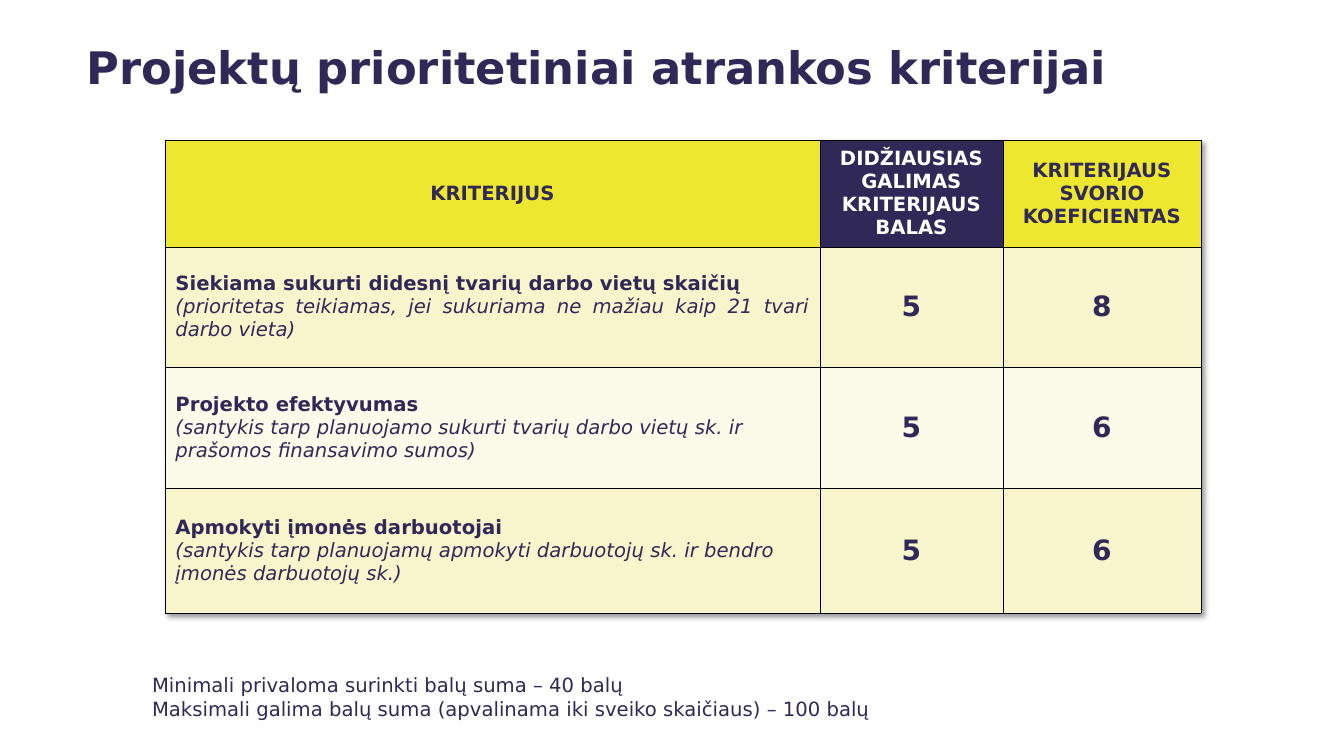
from lxml import etree
from pptx import Presentation, util as u
from pptx.dml.color import RGBColor
from pptx.enum import text
from pptx.oxml import ns

FONT = "DejaVu Sans"
NAVY, YELLOW, WHITE = "302857", "EEE730", "FFFFFF"
CREAM, PALE = "F8F5CD", "FCFAE8"
CENTER, JUSTIFY, LEFT = (text.PP_ALIGN.CENTER, text.PP_ALIGN.JUSTIFY,
                         text.PP_ALIGN.LEFT)

COLUMN_WIDTHS = [6.49, 1.82, 1.96]
ROW_HEIGHTS = [1.06, 1.19, 1.2, 1.24]
HEADERS = [
    ("KRITERIJUS", YELLOW, NAVY),
    ("DIDŽIAUSIAS GALIMAS KRITERIJAUS BALAS", NAVY, WHITE),
    ("KRITERIJAUS SVORIO KOEFICIENTAS", YELLOW, NAVY),
]
CRITERIA = [
    ("Siekiama sukurti didesnį tvarių darbo vietų skaičių",
     "(prioritetas teikiamas, jei sukuriama ne mažiau kaip 21 tvari darbo vieta)",
     JUSTIFY, "5", "8", CREAM),
    ("Projekto efektyvumas",
     "(santykis tarp planuojamo sukurti tvarių darbo vietų sk. ir prašomos "
     "finansavimo sumos)",
     LEFT, "5", "6", PALE),
    ("Apmokyti įmonės darbuotojai",
     "(santykis tarp planuojamų apmokyti darbuotojų sk. ir bendro įmonės "
     "darbuotojų sk.)",
     LEFT, "5", "6", CREAM),
]
LIMITS = [
    "Minimali privaloma surinkti balų suma – 40 balų",
    "Maksimali galima balų suma (apvalinama iki sveiko skaičiaus) – 100 balų",
]


def color(value):
    return RGBColor.from_string(value)


def line(words, **style):
    """Describe one paragraph: its words and its format."""
    return words, style


def write(para, words, size=14, ink=NAVY, bold=False, italic=False, align=LEFT):
    para.alignment = align
    span = para.add_run()
    span.text = words
    font = span.font
    font.name, font.size = FONT, u.Pt(size)
    font.bold, font.italic = bold, italic
    font.color.rgb = color(ink)


def fill_frame(frame, lines):
    for index, (words, style) in enumerate(lines):
        para = frame.add_paragraph() if index else frame.paragraphs[0]
        write(para, words, **style)


def add_xml(parent, tag, **attributes):
    return etree.SubElement(parent, ns.qn(tag), attributes)


class SlideBuilder:
    def __init__(self, deck):
        self.slide = deck.slides.add_slide(deck.slide_layouts[6])

    def text_box(self, left, top, width, height, lines,
                 anchor=text.MSO_ANCHOR.TOP, wrap=True):
        box = self.slide.shapes.add_textbox(
            *map(u.Inches, (left, top, width, height)))
        box.text_frame.word_wrap = wrap
        box.text_frame.vertical_anchor = anchor
        fill_frame(box.text_frame, lines)

    def table(self, left, top, widths, heights):
        frame = self.slide.shapes.add_table(
            len(heights), len(widths),
            *map(u.Inches, (left, top, sum(widths), sum(heights))))
        table = frame.table
        table.first_row = table.horz_banding = False
        for column, width in zip(table.columns, widths):
            column.width = u.Inches(width)
        for row, height in zip(table.rows, heights):
            row.height = u.Inches(height)
        self.table_shadow(table)
        return table

    def table_shadow(self, table):
        effects = etree.Element(ns.qn("a:effectLst"))
        shadow = add_xml(effects, "a:outerShdw", blurRad="50800", dist="38100",
                         dir="2700000", algn="tl", rotWithShape="0")
        black = add_xml(shadow, "a:srgbClr", val="000000")
        add_xml(black, "a:alpha", val="40000")
        table._tbl.tblPr.insert(0, effects)

    def cell(self, cell, lines, back):
        properties = cell._tc.get_or_add_tcPr()
        for side in "LRTB":
            border = add_xml(properties, f"a:ln{side}", w=str(u.Pt(0.25)))
            add_xml(add_xml(border, "a:solidFill"), "a:srgbClr", val="000000")
        cell.fill.solid()
        cell.fill.fore_color.rgb = color(back)
        cell.vertical_anchor = text.MSO_ANCHOR.MIDDLE
        fill_frame(cell.text_frame, lines)


def main():
    deck = Presentation()
    deck.slide_width, deck.slide_height = u.Inches(13.33), u.Inches(7.5)
    page = SlideBuilder(deck)

    page.text_box(0.76, 0.26, 11.08, 0.8,
                  [line("Projektų prioritetiniai atrankos kriterijai",
                        size=32, bold=True)],
                  anchor=text.MSO_ANCHOR.MIDDLE)

    table = page.table(1.64, 1.39, COLUMN_WIDTHS, ROW_HEIGHTS)
    for column, (words, back, ink) in enumerate(HEADERS):
        page.cell(table.cell(0, column),
                  [line(words, ink=ink, bold=True, align=CENTER)], back)
    for row, (name, detail, align, score, weight, back) in enumerate(CRITERIA, 1):
        page.cell(table.cell(row, 0),
                  [line(name, bold=True, align=JUSTIFY),
                   line(detail, italic=True, align=align)], back)
        for column, number in enumerate((score, weight), 1):
            page.cell(table.cell(row, column),
                      [line(number, size=20, bold=True, align=CENTER)], back)

    page.text_box(1.41, 6.63, 7.43, 0.57, [line(words) for words in LIMITS],
                  wrap=False)
    deck.save("out.pptx")


if __name__ == "__main__":
    main()
